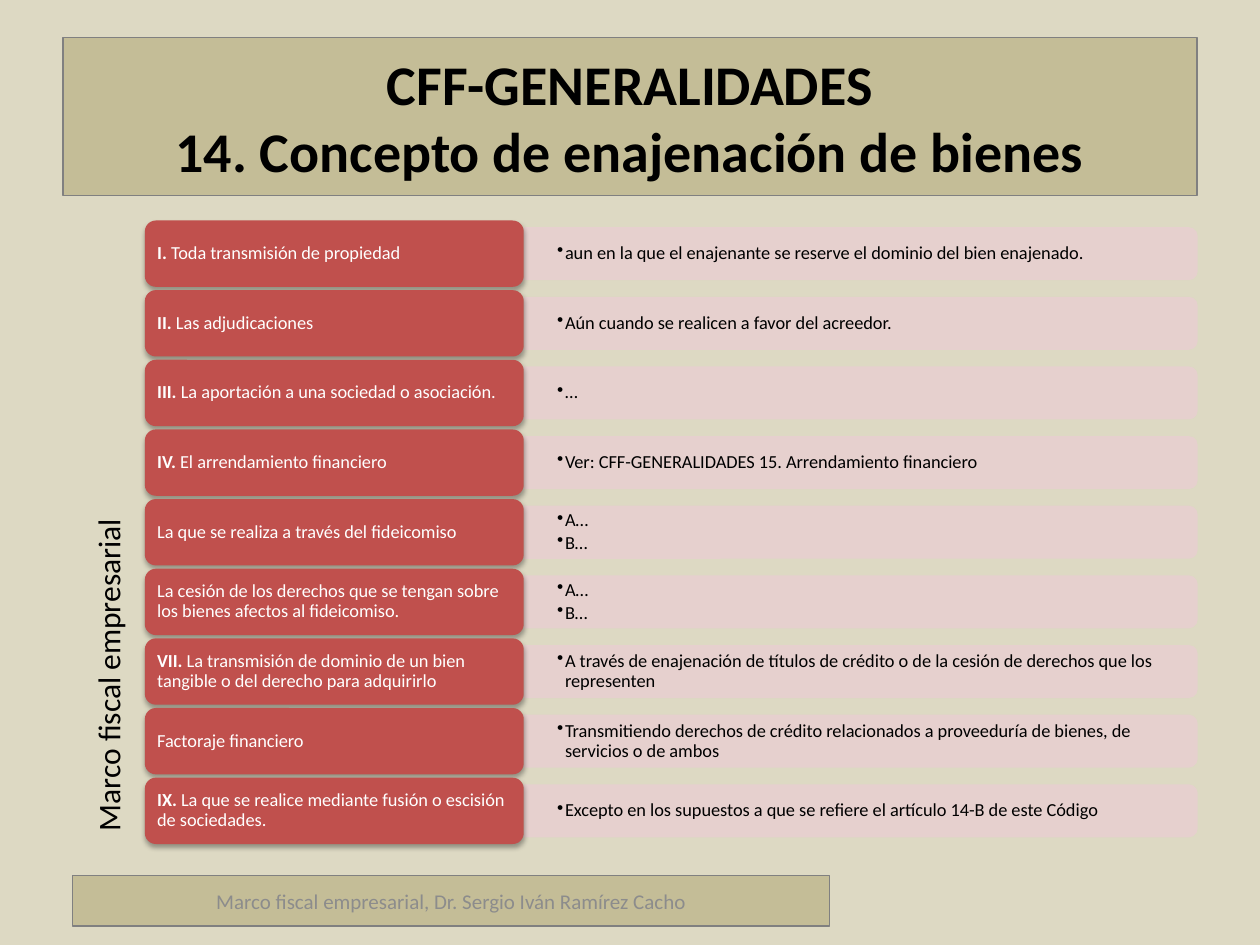
import pptx
import pptx.util
import pptx.dml.color
import pptx.enum.shapes
import pptx.enum.text
import pptx.oxml
import pptx.oxml.ns

Pt = pptx.util.Pt
KIND = pptx.enum.shapes.MSO_SHAPE
ALIGN = pptx.enum.text.PP_ALIGN
MIDDLE = pptx.enum.text.MSO_ANCHOR.MIDDLE
FIT = pptx.enum.text.MSO_AUTO_SIZE
NS = pptx.oxml.ns.nsdecls("a")
COLORS = {"back": "DDD9C3", "band": "C4BD97", "edge": "808080",
          "pill": "C0504D", "bar": "E8D0D0", "ink": "000000",
          "white": "FFFFFF", "gray": "8C8C8C"}

# Each row: numeral, concept, bullets
ROWS = [
    ("I.", " Toda transmisión de propiedad",
     ["aun en la que el enajenante se reserve el dominio del bien enajenado."]),
    ("II.", " Las adjudicaciones",
     ["Aún cuando se realicen a favor del acreedor."]),
    ("III.", " La aportación a una sociedad o asociación.", ["…"]),
    ("IV.", " El arrendamiento financiero",
     ["Ver: CFF-GENERALIDADES 15. Arrendamiento financiero"]),
    ("", "La que se realiza a través del fideicomiso", ["A…", "B…"]),
    ("", "La cesión de los derechos que se tengan sobre los bienes afectos "
     "al fideicomiso.", ["A…", "B…"]),
    ("VII.", " La transmisión de dominio de un bien tangible o del derecho "
     "para adquirirlo",
     ["A través de enajenación de títulos de crédito o de la cesión de "
      "derechos que los representen"]),
    ("", "Factoraje financiero",
     ["Transmitiendo derechos de crédito relacionados a proveeduría de "
      "bienes, de servicios o de ambos"]),
    ("IX.", " La que se realice mediante fusión o escisión de sociedades.",
     ["Excepto en los supuestos a que se refiere el artículo 14-B de este "
      "Código"]),
]
TOP, PITCH = 126, 39.8
PILL_X, PILL_W, PILL_H = 82.8, 216.5, 37.9
BAR_X, BAR_W, BAR_H = 299.2, 385.2, 30.3


def rgb(name):
    return pptx.dml.color.RGBColor.from_string(COLORS[name])


def paint(shape, fill, edge=None):
    shape.fill.solid()
    shape.fill.fore_color.rgb = rgb(fill)
    if edge:
        shape.line.color.rgb = rgb(edge)
        shape.line.width = Pt(0.75)
    else:
        shape.line.fill.background()


def style(para, size, color, bold=None):
    font = para.font
    font.name, font.size, font.bold = "Calibri", Pt(size), bold
    font.color.rgb = rgb(color)


def frame(shape, side, edge=0):
    text = shape.text_frame
    text.word_wrap = True
    text.auto_size = FIT.NONE
    text.vertical_anchor = MIDDLE
    text.margin_left = text.margin_right = Pt(side)
    text.margin_top = text.margin_bottom = Pt(edge)
    return text


def add_shape(slide, kind, x, y, w, h, fill, edge=None):
    shape = slide.shapes.add_shape(kind, Pt(x), Pt(y), Pt(w), Pt(h))
    shape.shadow.inherit = False
    paint(shape, fill, edge)
    return shape


def add_bar(slide, mid, items):
    # Upright shape turned so that its round corners face right
    bar = add_shape(slide, KIND.ROUND_2_SAME_RECTANGLE,
                    BAR_X + (BAR_W - BAR_H) / 2, mid - BAR_W / 2,
                    BAR_H, BAR_W, "bar")
    bar.rotation = 90
    tint = bar.fill._xPr.find(".//" + pptx.oxml.ns.qn("a:srgbClr"))
    tint.append(pptx.oxml.parse_xml(f'<a:alpha {NS} val="90000"/>'))

    box = slide.shapes.add_textbox(Pt(BAR_X), Pt(mid - 13.7),
                                   Pt(BAR_W - 2), Pt(27.4))
    text = frame(box, 19.2)
    for i, item in enumerate(items):
        para = text.paragraphs[0] if i == 0 else text.add_paragraph()
        para.text = item
        props = para._p.get_or_add_pPr()
        props.set("marL", str(Pt(4.5)))
        props.set("indent", str(Pt(-4.5)))
        props.append(pptx.oxml.parse_xml(f'<a:buChar {NS} char="•"/>'))
        para.line_spacing = 0.9
        para.space_after = Pt(1.6)
        style(para, 10.5, "ink")


def add_pill(slide, y, mark, label):
    pill = add_shape(slide, KIND.ROUNDED_RECTANGLE,
                     PILL_X, y, PILL_W, PILL_H, "pill")
    glow = pill._element.spPr.find(pptx.oxml.ns.qn("a:effectLst"))
    glow.append(pptx.oxml.parse_xml(
        f'<a:outerShdw {NS} blurRad="{Pt(3.1)}" dist="{Pt(1.8)}" '
        'dir="5400000" rotWithShape="0"><a:srgbClr val="000000">'
        '<a:alpha val="35000"/></a:srgbClr></a:outerShdw>'))
    para = frame(pill, 5.2, 3.6).paragraphs[0]
    para.alignment = ALIGN.LEFT
    para.line_spacing = 0.9
    style(para, 10.5, "white")
    if mark:
        run = para.add_run()
        run.text = mark
        run.font.bold = True
    para.add_run().text = label


def add_title(slide):
    title = slide.shapes.title
    title.left, title.top = Pt(36), Pt(21.6)
    title.width, title.height = Pt(648), Pt(90)
    paint(title, "band", "edge")
    text = frame(title, 7.2, 3.6)
    para = text.paragraphs[0]
    para.text = "CFF-GENERALIDADES\v14. Concepto de enajenación de bienes"
    para.alignment = ALIGN.CENTER
    style(para, 32, "ink", True)


def add_side(slide):
    box = slide.shapes.add_textbox(Pt(-116.6), Pt(289.4), Pt(356.4), Pt(29))
    box.rotation = 270
    para = frame(box, 7.2, 3.6).paragraphs[0]
    para.text = "Marco fiscal empresarial"
    style(para, 18, "ink")


def add_foot(slide):
    foot = add_shape(slide, KIND.RECTANGLE, 41.5, 500.4, 432.7, 28.8,
                     "band", "edge")
    para = frame(foot, 7.2, 3.6).paragraphs[0]
    para.text = "Marco fiscal empresarial, Dr. Sergio Iván Ramírez Cacho"
    para.alignment = ALIGN.CENTER
    style(para, 12, "gray")


def main():
    deck = pptx.Presentation()
    deck.slide_width, deck.slide_height = Pt(720), Pt(540)
    slide = deck.slides.add_slide(deck.slide_layouts[5])
    slide.background.fill.solid()
    slide.background.fill.fore_color.rgb = rgb("back")

    add_side(slide)
    add_title(slide)
    for i, (mark, label, items) in enumerate(ROWS):
        y = TOP + i * PITCH
        add_bar(slide, y + PILL_H / 2, items)
        add_pill(slide, y, mark, label)
    add_foot(slide)
    deck.save("out.pptx")


if __name__ == "__main__":
    main()
